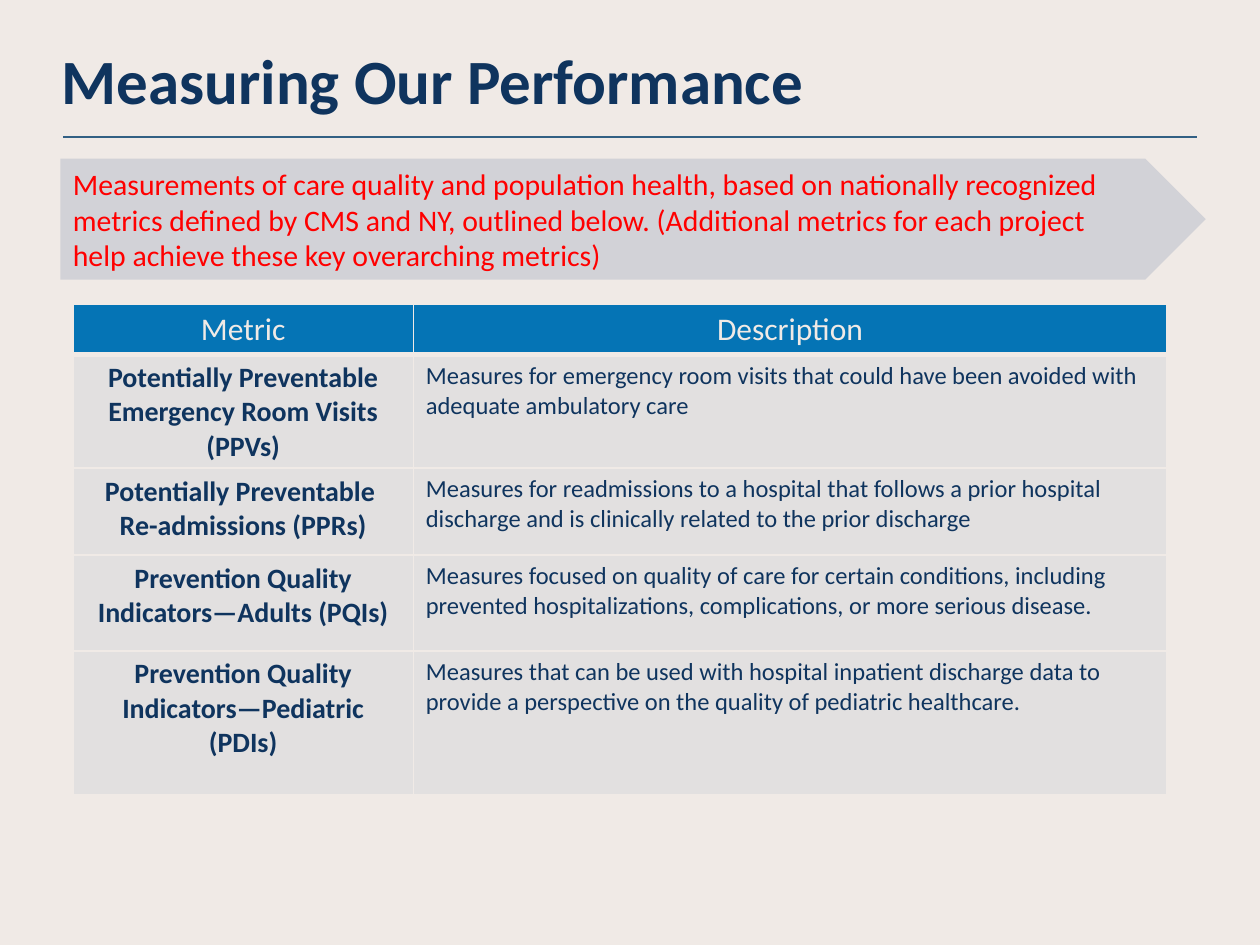
from dataclasses import dataclass

from lxml.etree import SubElement
from pptx import Presentation
from pptx.dml.color import RGBColor
from pptx.enum.shapes import MSO_CONNECTOR as Connector, MSO_SHAPE as Shape
from pptx.enum.text import MSO_ANCHOR as Anchor, MSO_AUTO_SIZE as AutoSize, PP_ALIGN as Align
from pptx.oxml.ns import qn
from pptx.util import Inches, Pt

WIDTH, HEIGHT = Inches(10), Inches(7.5)
FONT = "Calibri"
CREAM, NAVY, BLUE, RED = "F0EAE6", "0F345E", "0574B5", "FF0000"
TINT, RULE, ARROW = "336699", "326084", "D2D2D7"


@dataclass(frozen=True)
class Area:
    left: float
    top: float
    width: float
    height: float

    def lengths(self) -> tuple[int, int, int, int]:
        return (int(self.left * WIDTH), int(self.top * HEIGHT),
                int(self.width * WIDTH), int(self.height * HEIGHT))


@dataclass(frozen=True)
class Style:
    size: float
    color: str
    bold: bool = False
    align: Align = Align.LEFT
    space_after: float = 0


@dataclass(frozen=True)
class Metric:
    name: tuple[str, ...]
    description: str
    height: float
    space_after: float = 0


TITLE = Style(36, NAVY, True)
SUMMARY = Style(17, RED)
HEADER = Style(18, CREAM, align=Align.CENTER)
NAME = Style(16, NAVY, True, Align.CENTER)

SUMMARY_LINES = (
    "Measurements of care quality and population health, based on nationally recognized ",
    "metrics defined by CMS and NY, outlined below. (Additional metrics for each project ",
    "help achieve these key overarching metrics)",
)
HEADINGS = ("Metric", "Description")
HEADER_HEIGHT = 0.38
COLUMN_WIDTHS = (2.7, 5.98)
METRICS = (
    Metric(("Potentially Preventable Emergency Room Visits (PPVs)",),
           "Measures for emergency room visits that could have been avoided with "
           "adequate ambulatory care", 0.88, 8),
    Metric(("Potentially Preventable ", "Re-admissions (PPRs)"),
           "Measures for readmissions to a hospital that follows a prior hospital "
           "discharge and is clinically related to the prior discharge", 0.69, 8),
    Metric(("Prevention Quality Indicators—Adults (PQIs)",),
           "Measures focused on quality of care for certain conditions, including "
           "prevented hospitalizations, complications, or more serious disease.", 0.76),
    Metric(("Prevention Quality Indicators—Pediatric (PDIs)",),
           "Measures that can be used with hospital inpatient discharge data to "
           "provide a perspective on the quality of pediatric healthcare.", 1.14),
)


def paint(color_format, color: str) -> None:
    color_format.rgb = RGBColor.from_string(color)


def fill_solid(fill, color: str) -> None:
    fill.solid()
    paint(fill.fore_color, color)


def add_run(paragraph, text: str, style: Style) -> None:
    run = paragraph.add_run()
    run.text = text
    run.font.name = FONT
    run.font.size = Pt(style.size)
    run.font.bold = style.bold
    paint(run.font.color, style.color)


def write(frame, lines: tuple[str, ...], style: Style, soft_breaks: bool = False) -> None:
    paragraph = frame.paragraphs[0]
    for index, line in enumerate(lines):
        if index and soft_breaks:
            paragraph.add_line_break()
        elif index:
            paragraph = frame.add_paragraph()
        paragraph.alignment = style.align
        paragraph.space_after = Pt(style.space_after)
        add_run(paragraph, line, style)


def add_borders(cell, bottom: float) -> None:
    properties = cell._tc.get_or_add_tcPr()
    sides = (("lnL", 1), ("lnR", 1), ("lnT", 1), ("lnB", bottom))
    for position, (side, width) in enumerate(sides):
        border = SubElement(properties, qn(f"a:{side}"), w=str(Pt(width)))
        solid = SubElement(border, qn("a:solidFill"))
        SubElement(solid, qn("a:srgbClr"), val=CREAM)
        properties.insert(position, border)


def fill_cell(cell, lines: tuple[str, ...], style: Style, header: bool = False) -> None:
    write(cell.text_frame, lines, style)
    fill_solid(cell.fill, BLUE if header else TINT)
    if not header:
        color = cell._tc.tcPr.find(".//" + qn("a:srgbClr"))
        SubElement(color, qn("a:alpha"), val="7000")
    add_borders(cell, 3 if header else 1)


def add_title(slide) -> None:
    title = slide.shapes.title
    title.left, title.top, title.width, title.height = Area(0.039, 0.036, 0.871, 0.095).lengths()
    frame = title.text_frame
    frame.vertical_anchor = Anchor.BOTTOM
    frame.word_wrap = True
    frame.auto_size = AutoSize.SHAPE_TO_FIT_TEXT
    write(frame, ("Measuring Our Performance",), TITLE)


def add_rule(slide) -> None:
    left, top, width, _ = Area(0.05, 0.145, 0.9, 0).lengths()
    rule = slide.shapes.add_connector(Connector.STRAIGHT, left, top, left + width, top)
    paint(rule.line.color, RULE)
    rule.line.width = Pt(1.25)
    SubElement(rule._element.spPr, qn("a:effectLst"))


def add_summary(slide) -> None:
    arrow = slide.shapes.add_shape(Shape.PENTAGON, *Area(0.048, 0.168, 0.909, 0.128).lengths())
    arrow.adjustments[0] = 0.5
    arrow.shadow.inherit = False
    fill_solid(arrow.fill, ARROW)
    arrow.line.fill.background()
    arrow.text_frame.word_wrap = False
    arrow.text_frame.vertical_anchor = Anchor.MIDDLE
    write(arrow.text_frame, SUMMARY_LINES, SUMMARY, soft_breaks=True)


def add_metrics(slide) -> None:
    area = Area(0.058, 0.322, 0.868, 0.519)
    table = slide.shapes.add_table(len(METRICS) + 1, len(HEADINGS), *area.lengths()).table
    for column, width in zip(table.columns, COLUMN_WIDTHS):
        column.width = Inches(width)
    heights = (HEADER_HEIGHT, *(metric.height for metric in METRICS))
    for row, height in zip(table.rows, heights):
        row.height = Inches(height)
    for index, heading in enumerate(HEADINGS):
        fill_cell(table.cell(0, index), (heading,), HEADER, header=True)
    for index, metric in enumerate(METRICS, 1):
        fill_cell(table.cell(index, 0), metric.name, NAME)
        description = Style(14, NAVY, space_after=metric.space_after)
        fill_cell(table.cell(index, 1), (metric.description,), description)


def main() -> None:
    presentation = Presentation()
    presentation.slide_width, presentation.slide_height = WIDTH, HEIGHT
    slide = presentation.slides.add_slide(presentation.slide_layouts[5])
    fill_solid(slide.background.fill, CREAM)
    add_rule(slide)
    add_metrics(slide)
    add_title(slide)
    add_summary(slide)
    presentation.save("out.pptx")


if __name__ == "__main__":
    main()
